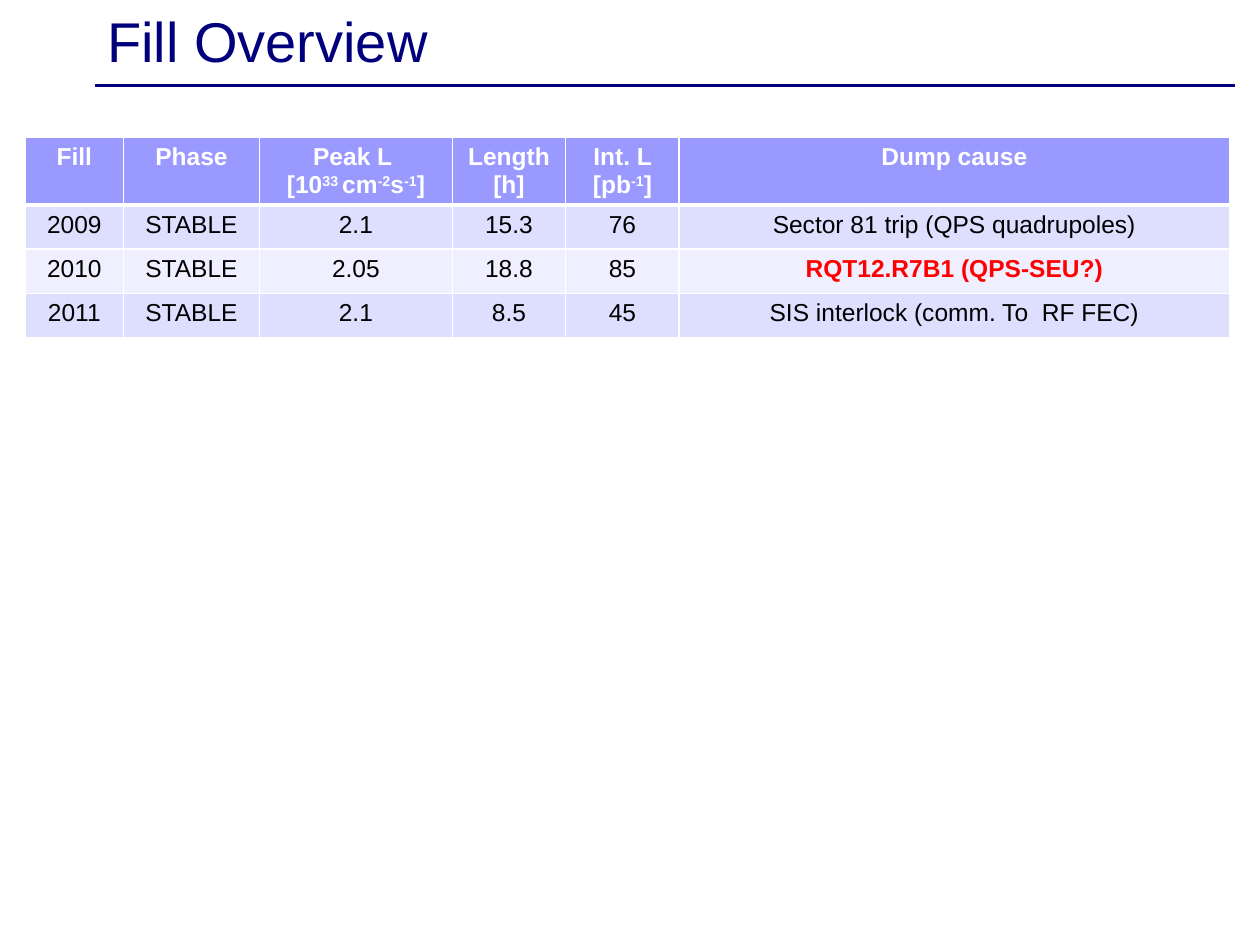
from dataclasses import dataclass

from lxml import etree
from pptx import Presentation
from pptx import util as u
from pptx.dml.color import RGBColor
from pptx.enum import shapes, text
from pptx.oxml import ns


@dataclass(frozen=True)
class Theme:
    font: str = "Arial"
    navy: str = "00007D"
    head: str = "9999FF"
    bands: tuple = ("DEDEFF", "EFEFFF")
    white: str = "FFFFFF"
    black: str = "000000"
    alert: str = "FF0000"
    title: int = 32
    body: int = 14


HEADS = ["Fill", "Phase", "Peak L \n[10^33 ^cm^-2^s^-1^]", "Length [h]",
         "Int. L [pb^-1^]", "Dump cause"]
FILLS = [
    ["2009", "STABLE", "2.1", "15.3", "76", "Sector 81 trip (QPS quadrupoles)"],
    ["2010", "STABLE", "2.05", "18.8", "85", "RQT12.R7B1 (QPS-SEU?)"],
    ["2011", "STABLE", "2.1", "8.5", "45", "SIS interlock (comm. To  RF FEC)"],
]
ALERT = (2, 5)
COLS = [0.78, 1.08, 1.53, 0.9, 0.9, 4.37]
ROWS = [0.49, 0.35, 0.35, 0.35]


def write(frame, words, size, color, font, bold=False, align=text.PP_ALIGN.LEFT):
    """Fill a frame; newlines split paragraphs and ^...^ marks superscript."""
    for i, line in enumerate(words.split("\n")):
        para = frame.add_paragraph() if i else frame.paragraphs[0]
        para.alignment = align
        para.space_before = u.Pt(0)
        for j, part in enumerate(line.split("^")):
            if not part:
                continue
            run = para.add_run()
            run.text = part
            run.font.name, run.font.size = font, u.Pt(size)
            run.font.bold = bold
            run.font.color.rgb = RGBColor.from_string(color)
            if j % 2:
                run.font._element.set("baseline", "30000")


def border(cell, side, width, color):
    line = etree.SubElement(cell._tc.get_or_add_tcPr(), ns.qn(f"a:ln{side}"),
                            w=str(u.Pt(width)))
    fill = etree.SubElement(line, ns.qn("a:solidFill"))
    etree.SubElement(fill, ns.qn("a:srgbClr"), val=color)


class Page:
    """Holds the theme and the current slide."""

    def __init__(self, deck, theme):
        self.theme = theme
        self.slide = deck.slides.add_slide(deck.slide_layouts[5])

    def rule(self, left, right, top):
        line = self.slide.shapes.add_connector(
            shapes.MSO_CONNECTOR.STRAIGHT,
            u.Inches(left), u.Inches(top), u.Inches(right), u.Inches(top))
        line.line.color.rgb = RGBColor.from_string(self.theme.navy)
        line.line.width = u.Pt(2)
        etree.SubElement(line._element.spPr, ns.qn("a:effectLst"))

    def title(self, words, left, top, width, height):
        box = self.slide.shapes.title
        box.left, box.top = u.Inches(left), u.Inches(top)
        box.width, box.height = u.Inches(width), u.Inches(height)
        box.text_frame.vertical_anchor = text.MSO_ANCHOR.MIDDLE
        write(box.text_frame, words, size=self.theme.title,
              color=self.theme.navy, font=self.theme.font)

    def table(self, data, left, top):
        grid = self.slide.shapes.add_table(
            len(ROWS), len(COLS), u.Inches(left), u.Inches(top),
            u.Inches(sum(COLS)), u.Inches(sum(ROWS))).table
        for col, width in zip(grid.columns, COLS):
            col.width = u.Inches(width)
        for row, height in zip(grid.rows, ROWS):
            row.height = u.Inches(height)
        for r, line in enumerate(data):
            for c, words in enumerate(line):
                self.cell(grid.cell(r, c), words, r, (r, c) == ALERT)

    def cell(self, cell, words, row, alert):
        look = self.theme
        head = row == 0
        edges = {"L": 1, "R": 1, "T": 3 if row == 1 else 1, "B": 3 if head else 1}
        for side, width in edges.items():
            border(cell, side, width, look.white)
        cell.fill.solid()
        shade = look.head if head else look.bands[(row - 1) % 2]
        cell.fill.fore_color.rgb = RGBColor.from_string(shade)
        ink = look.white if head else look.alert if alert else look.black
        write(cell.text_frame, words, size=look.body, color=ink, font=look.font,
              bold=head or alert, align=text.PP_ALIGN.CENTER)


def main():
    deck = Presentation()
    deck.slide_width, deck.slide_height = u.Inches(10), u.Inches(7.5)
    page = Page(deck, Theme())
    page.rule(0.75, 9.8, 0.68)
    page.title("Fill Overview", 0.75, 0.03, 9, 0.57)
    page.table([HEADS] + FILLS, 0.2, 1.09)
    deck.save("out.pptx")


if __name__ == "__main__":
    main()
